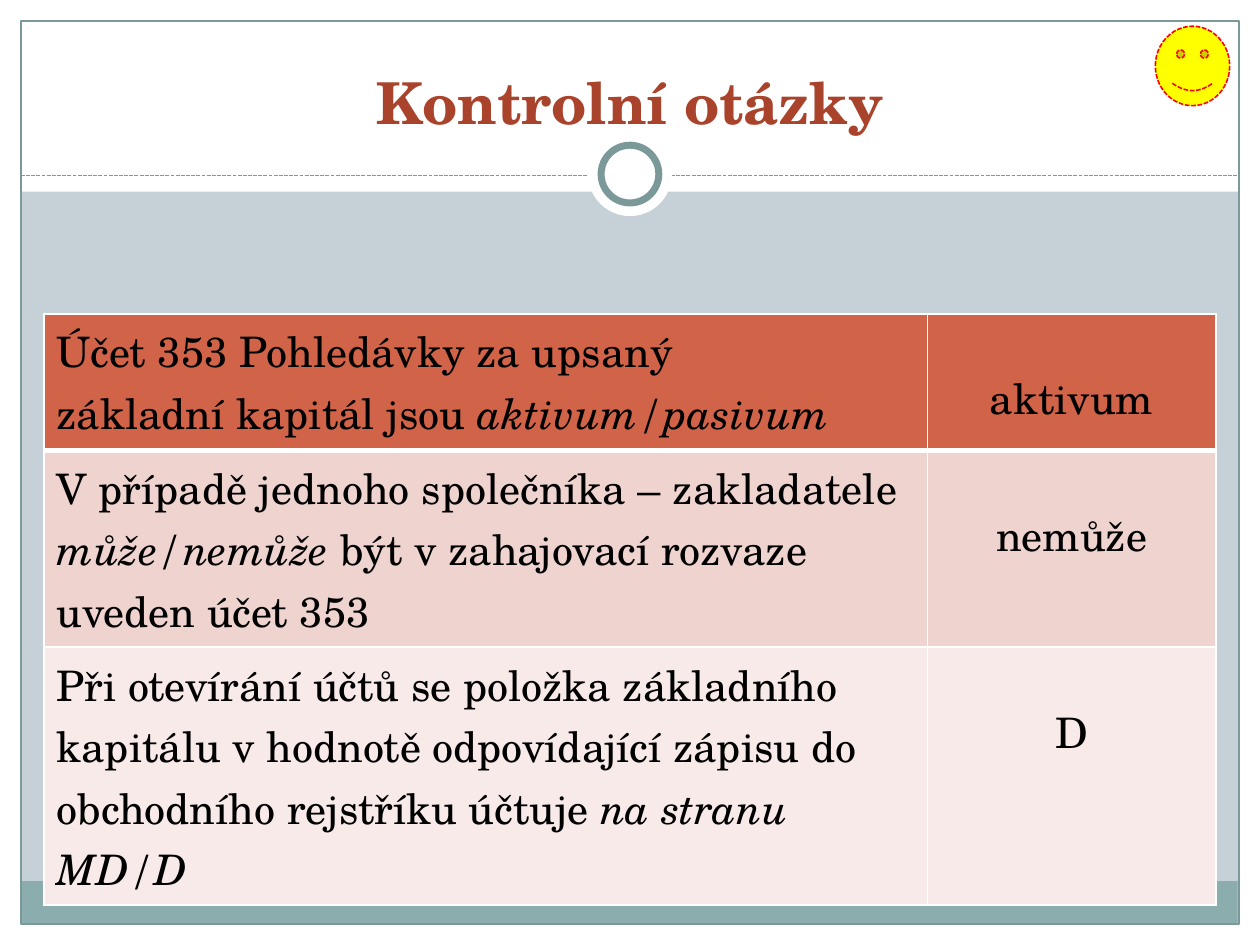
"""Build the review-questions slide with its answer table."""
from lxml.etree import SubElement
from pptx import Presentation
from pptx.dml.color import RGBColor
from pptx.enum.dml import MSO_LINE
from pptx.enum.shapes import MSO_CONNECTOR, MSO_SHAPE
from pptx.enum.text import MSO_ANCHOR, PP_ALIGN
from pptx.oxml import parse_xml
from pptx.oxml.ns import nsdecls, qn
from pptx.util import Pt

FONT = "TeX Gyre Schola"
WHITE, TEAL = "FFFFFF", "7C999A"


def color(value):
    return RGBColor.from_string(value)


def add_part(kind, box, fill=None, line=None, width=0.75):
    part = slide.shapes.add_shape(kind, *[Pt(length) for length in box])
    part.shadow.inherit = False
    if fill:
        part.fill.solid()
        part.fill.fore_color.rgb = color(fill)
    else:
        part.fill.background()
    if line:
        part.line.color.rgb = color(line)
        part.line.width = Pt(width)
    else:
        part.line.fill.background()
    return part


presentation = Presentation()
presentation.slide_width, presentation.slide_height = Pt(720), Pt(540)
slide = presentation.slides.add_slide(presentation.slide_layouts[6])
slide.background.fill.solid()
slide.background.fill.fore_color.rgb = color("C5D1D7")

margins = [(0, 528, 720, 12), (0, 0, 720, 109.5), (0, 0, 12, 540), (708, 0, 12, 540)]
for margin in margins:
    add_part(MSO_SHAPE.RECTANGLE, margin, WHITE)
add_part(MSO_SHAPE.RECTANGLE, (11.75, 503.5, 695.5, 24.5), "8CADAE")
add_part(MSO_SHAPE.RECTANGLE, (12, 12, 696, 516), line=TEAL)

divider = slide.shapes.add_connector(MSO_CONNECTOR.STRAIGHT, Pt(12), Pt(100.5), Pt(708), Pt(100.5))
divider.line.color.rgb = color(TEAL)
divider.line.width = Pt(0.75)
divider.line.dash_style = MSO_LINE.SQUARE_DOT
SubElement(divider._element.spPr, qn("a:effectLst"))

add_part(MSO_SHAPE.OVAL, (336, 75.5, 48, 48), WHITE)
add_part(MSO_SHAPE.OVAL, (343.5, 83, 33, 33), WHITE, TEAL, 4)

heading = slide.shapes.add_textbox(Pt(24), Pt(18), Pt(672), Pt(60)).text_frame
heading.word_wrap = True
heading.vertical_anchor = MSO_ANCHOR.BOTTOM
heading.margin_bottom = 0
heading.text = "Kontrolní otázky"
heading.paragraphs[0].alignment = PP_ALIGN.CENTER
heading_font = heading.paragraphs[0].runs[0].font
heading_font.name, heading_font.size, heading_font.bold = FONT, Pt(33), True
heading_font.color.rgb = color("A9432B")

# Each question is a list of paragraphs; odd pieces of a paragraph are italic.
questions = [
    ([["Účet 353 Pohledávky za upsaný"], ["základní kapitál jsou ", "aktivum/pasivum"]],
     "aktivum", "D16349", 78),
    ([["V případě jednoho společníka – zakladatele ", "může/nemůže",
       " být v zahajovací rozvaze uveden účet 353"]],
     "nemůže", "EED3CF", 112.5),
    ([["Při otevírání účtů se položka základního kapitálu v hodnotě odpovídající "
       "zápisu do obchodního rejstříku účtuje ", "na stranu MD/D"]],
     "D", "F7EAE9", 147.5),
]
quiz = slide.shapes.add_table(3, 2, Pt(25.2), Pt(179.3), Pt(669.6), Pt(338)).table
quiz.columns[0].width, quiz.columns[1].width = Pt(504.7), Pt(164.9)

for row, (question, answer, fill, height) in enumerate(questions):
    quiz.rows[row].height = Pt(height)
    edges = {"L": 1, "R": 1, "T": 3 if row == 1 else 1, "B": 3 if row == 0 else 1}
    for column, paragraphs in enumerate([question, [[answer]]]):
        cell = quiz.cell(row, column)
        for side, width in edges.items():
            cell._tc.get_or_add_tcPr().append(parse_xml(
                f'<a:ln{side} {nsdecls("a")} w="{Pt(width)}"><a:solidFill>'
                f'<a:srgbClr val="{WHITE}"/></a:solidFill></a:ln{side}>'))
        cell.fill.solid()
        cell.fill.fore_color.rgb = color(fill)
        if column == 1:
            cell.margin_top = Pt(30.6)
        for index, pieces in enumerate(paragraphs):
            frame = cell.text_frame
            paragraph = frame.add_paragraph() if index else frame.paragraphs[0]
            paragraph.alignment = PP_ALIGN.CENTER if column else PP_ALIGN.LEFT
            for position, piece in enumerate(pieces):
                run = paragraph.add_run()
                run.text = piece
                run.font.name, run.font.size = FONT, Pt(24)
                run.font.bold, run.font.italic = False, position % 2 == 1
                run.font.color.rgb = color("000000")

smiley = add_part(MSO_SHAPE.SMILEY_FACE, (660.2, 15, 42.5, 45.4), "FFFF00", "FF0000", 0.9)
smiley.adjustments[0] = 0.05
smiley.line.dash_style = MSO_LINE.SQUARE_DOT

presentation.save("out.pptx")
